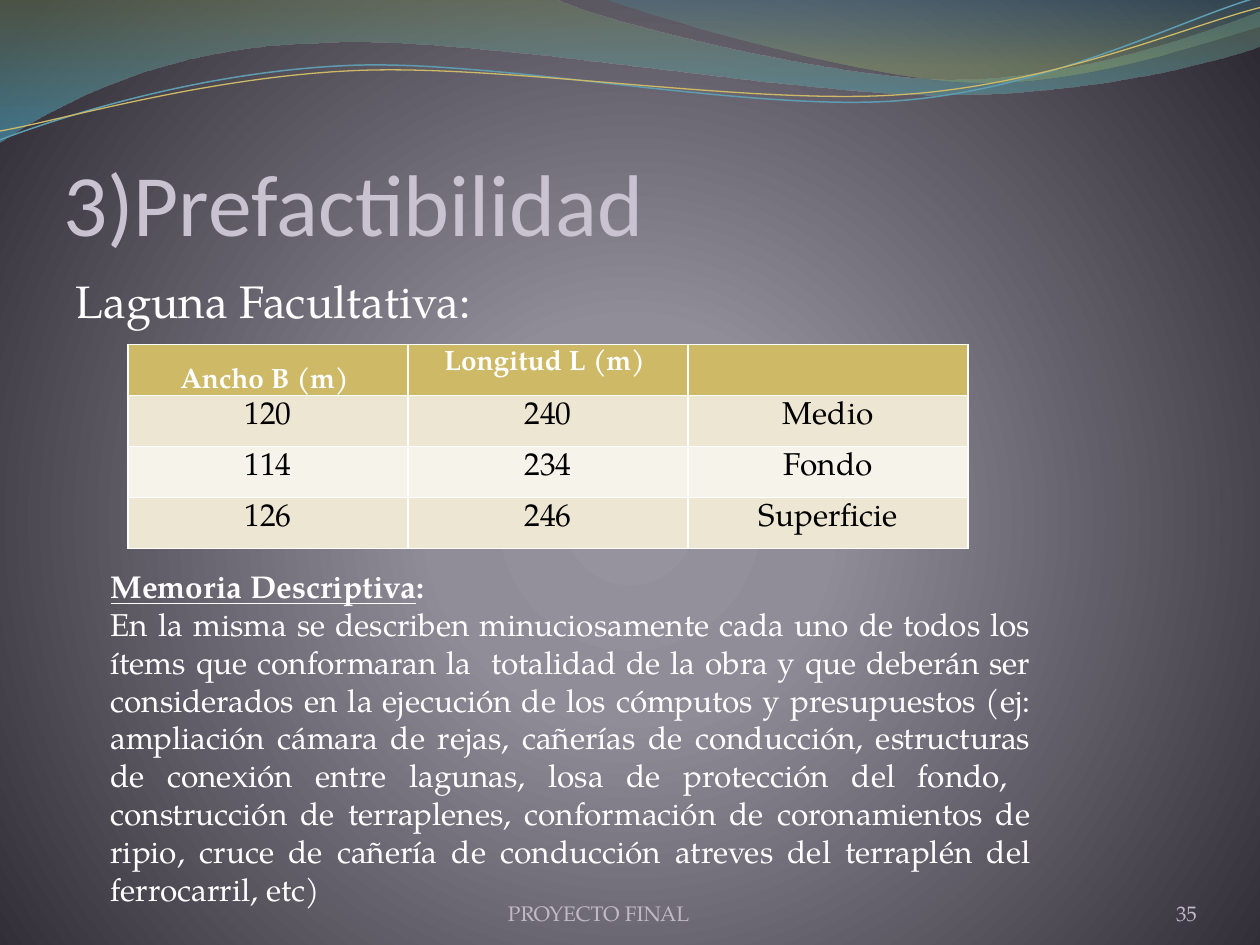
from dataclasses import dataclass
from typing import Optional

from lxml.etree import SubElement
from pptx import Presentation
from pptx.dml.color import RGBColor
from pptx.enum.text import MSO_ANCHOR as Anchor, MSO_AUTO_SIZE as AutoSize, PP_ALIGN as Align
from pptx.oxml import parse_xml
from pptx.oxml.ns import nsdecls, qn
from pptx.util import Cm, Pt

SERIF = "TeX Gyre Pagella"
WHITE, GOLD, MUTED = "FFFFFF", "CEB966", "C0B9C8"
INCH = 2.54  # wave coordinates are in inches


@dataclass
class Stop:
    pos: int
    color: str
    alpha: int = 100


@dataclass
class Wave:
    start: tuple
    segments: list  # two numbers: line; six numbers: cubic curve
    stops: Optional[list] = None
    line: Optional[str] = None
    width: float = 0


WAVES = [
    Wave((0, 0), [(4.4, -0.01), (4.76, 0.17, 6.64, 0.63, 7.58, 0.63),
                  (8.53, 0.63, 9.58, 0.26, 10, 0.09), (10.01, 0.36),
                  (9.83, 0.44, 8.7, 0.76, 7.46, 0.75),
                  (6.22, 0.75, 3.82, 0.28, 2.57, 0.34),
                  (1.29, 0.36, 0.46, 0.83, -0.01, 1.13), (0, 0)],
         stops=[Stop(0, "74855E", 45), Stop(100, "4AACCE", 55)]),
    Wave((4.79, -0.01), [(5.09, 0.11, 6.82, 0.62, 7.69, 0.65),
                         (8.56, 0.69, 9.61, 0.32, 10, 0.21), (10, 0), (4.79, -0.01)],
         stops=[Stop(0, "45889F", 30), Stop(80, "8AA36D", 45)]),
    Wave((0, 1.11), [(0.48, 0.93, 1.58, 0.57, 2.77, 0.52),
                     (3.95, 0.47, 5.93, 0.89, 7.13, 0.8),
                     (8.33, 0.71, 9.38, 0.15, 9.98, -0.02)],
         line="5E9CB1", width=0.85),
    Wave((0, 1.04), [(0.47, 0.96, 1.64, 0.61, 2.83, 0.56),
                     (4.03, 0.51, 5.97, 0.84, 7.17, 0.75),
                     (8.36, 0.67, 9.41, 0.21, 10, 0.06)],
         line=GOLD, width=0.75),
]

ROWS = [
    ("Ancho B (m) ", "Longitud L (m) ", ""),
    ("120", "240", "Medio"),
    ("114", "234", "Fondo"),
    ("126", "246", "Superficie"),
]
ROW_FILLS = [GOLD, "EDE6D3", "F6F3EA", "EDE6D3"]

MEMORIA = (
    "En la misma se describen minuciosamente cada uno de todos los ítems que conformaran la  "
    "totalidad de la obra y que deberán ser considerados en la ejecución de los cómputos y "
    "presupuestos (ej: ampliación cámara de rejas, cañerías de conducción, estructuras de "
    "conexión entre lagunas, losa de protección del fondo,  construcción de terraplenes, "
    "conformación de coronamientos de ripio, cruce de cañería de conducción atreves del "
    "terraplén del ferrocarril, etc)"
)


def rgb(color: str) -> RGBColor:
    return RGBColor.from_string(color)


def set_font(font, size: float, color: str, name: str = SERIF, bold: bool = False) -> None:
    font.name, font.size, font.bold = name, Pt(size), bold
    font.color.rgb = rgb(color)


def place(sp, left: float, top: float, width: float, height: float) -> None:
    sp.left, sp.top, sp.width, sp.height = Cm(left), Cm(top), Cm(width), Cm(height)


def set_gradient(fill, element, stops: list, direction: str) -> None:
    """Give the fill found in element its stops and direction."""
    fill.gradient()
    old = next(element.iter(qn("a:gradFill")))
    marks = "".join(
        f'<a:gs pos="{s.pos * 1000}"><a:srgbClr val="{s.color}">'
        f'<a:alpha val="{s.alpha * 1000}"/></a:srgbClr></a:gs>' for s in stops)
    new = parse_xml(f'<a:gradFill {nsdecls("a")} rotWithShape="1">'
                    f"<a:gsLst>{marks}</a:gsLst>{direction}</a:gradFill>")
    old.getparent().replace(old, new)


def bend(sp, segments: list) -> None:
    """Turn the outline's straight segments into cubic curves where given."""
    for line, seg in zip(list(sp.element.iter(qn("a:lnTo"))), segments):
        if len(seg) == 6:
            curve = SubElement(line.getparent(), qn("a:cubicBezTo"))
            for x, y in zip(seg[::2], seg[1::2]):
                SubElement(curve, qn("a:pt"), x=str(Cm(x * INCH) - sp.left),
                           y=str(Cm(y * INCH) - sp.top))
            line.getparent().replace(line, curve)


def draw_wave(slide, wave: Wave, depth: int) -> None:
    first, *rest = [(Cm(x * INCH), Cm(y * INCH))
                    for x, y in [wave.start] + [seg[-2:] for seg in wave.segments]]
    builder = slide.shapes.build_freeform(*first)
    builder.add_line_segments(rest, close=wave.stops is not None)
    sp = builder.convert_to_shape()
    bend(sp, wave.segments)
    sp.shadow.inherit = False
    if wave.stops:
        set_gradient(sp.fill, sp.element, wave.stops, '<a:lin ang="5400000" scaled="0"/>')
        sp.line.fill.background()
    else:
        sp.fill.background()
        sp.line.color.rgb = rgb(wave.line)
        sp.line.width = Pt(wave.width)
    slide.shapes.element.insert(2 + depth, sp.element)  # behind the placeholders


def add_footer(slide, text: str, left: float, width: float, align: Align) -> None:
    tf = slide.shapes.add_textbox(Cm(left), Cm(17.65), Cm(width), Cm(1.02)).text_frame
    tf.word_wrap, tf.vertical_anchor = True, Anchor.BOTTOM
    tf.margin_left = tf.margin_top = tf.margin_right = tf.margin_bottom = 0
    p = tf.paragraphs[0]
    p.text, p.alignment = text, align
    set_font(p.font, 12, MUTED)


def format_cell(cell, text: str, fill: str, header: bool) -> None:
    cell.fill.solid()
    cell.fill.fore_color.rgb = rgb(fill)
    p = cell.text_frame.paragraphs[0]
    p.alignment = Align.CENTER
    if text:
        p.text = text
    set_font(p.font, 16 if header else 18, WHITE if header else "000000", bold=header)


def main() -> None:
    prs = Presentation()
    prs.slide_width, prs.slide_height = Cm(25.4), Cm(19.05)
    slide = prs.slides.add_slide(prs.slide_layouts[1])

    # Background and waves
    set_gradient(slide.background.fill, slide.element,
                 [Stop(0, "96929E"), Stop(25, "918D98"), Stop(100, "2D2A33")],
                 '<a:path path="circle"><a:fillToRect l="10000" t="110000" '
                 'r="10000" b="100000"/></a:path>')
    for depth, wave in enumerate(WAVES):
        draw_wave(slide, wave, depth)

    # Title
    title = slide.shapes.title
    place(title, 1.27, 1.95, 22.86, 3.18)
    tf = title.text_frame
    tf.auto_size, tf.vertical_anchor = AutoSize.NONE, Anchor.BOTTOM
    tf.margin_left = tf.margin_right = tf.margin_bottom = 0
    p = tf.paragraphs[0]
    p.text, p.alignment = "3)Prefactibilidad", Align.LEFT
    set_font(p.font, 50, "C9C2D1", "Calibri")

    # Subtitle in the body
    body = slide.placeholders[1]
    place(body, 1.27, 5.38, 22.86, 12.19)
    tf = body.text_frame
    tf.auto_size = AutoSize.NONE
    p = tf.paragraphs[0]
    p.text = "Laguna Facultativa:"
    set_font(p.font, 26, WHITE)
    pPr = p._p.get_or_add_pPr()
    pPr.set("marL", str(Cm(0.76)))
    pPr.set("indent", str(-Cm(0.76)))
    pPr.insert(0, parse_xml(f'<a:buNone {nsdecls("a")}/>'))

    # Footer and slide number
    add_footer(slide, "PROYECTO FINAL", 7.41, 9.32, Align.CENTER)
    add_footer(slide, "35", 22.02, 2.11, Align.RIGHT)

    # Lagoon dimensions; the white borders come from the table style
    table = slide.shapes.add_table(len(ROWS), len(ROWS[0]), Cm(2.58), Cm(6.94),
                                   Cm(16.94), Cm(4.12)).table
    table.horz_banding = False
    for i, (row, fill) in enumerate(zip(ROWS, ROW_FILLS)):
        for j, text in enumerate(row):
            format_cell(table.cell(i, j), text, fill, header=i == 0)
    width_cell = table.cell(0, 0)
    width_cell.vertical_anchor = Anchor.BOTTOM
    width_cell.margin_left = width_cell.margin_right = Cm(0.13)
    width_cell.margin_top = width_cell.margin_bottom = 0
    width_cell.text_frame.paragraphs[0].line_spacing = 1.5

    # Descriptive report
    tf = slide.shapes.add_textbox(Cm(1.98), Cm(11.31), Cm(19.05), Cm(6.4)).text_frame
    tf.word_wrap, tf.auto_size = True, AutoSize.SHAPE_TO_FIT_TEXT
    heading, text = tf.paragraphs[0], tf.add_paragraph()
    heading.add_run().text = "Memoria Descriptiva"
    heading.runs[0].font.underline = True
    heading.add_run().text = ":"
    text.text = MEMORIA
    for p in (heading, text):
        p.alignment = Align.JUSTIFY
        set_font(p.font, 18, WHITE, bold=p is heading)

    prs.save("out.pptx")


if __name__ == "__main__":
    main()
